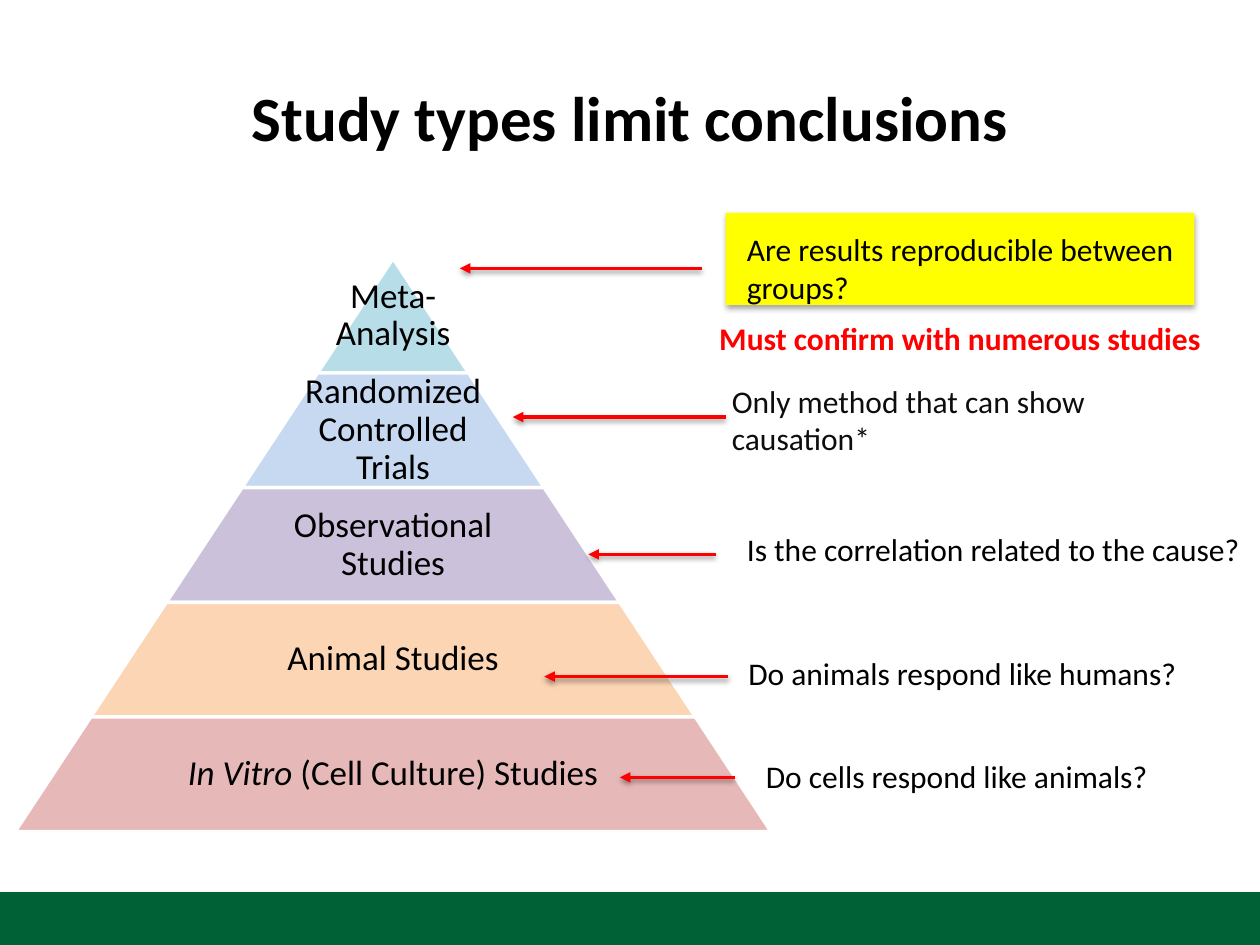
from dataclasses import dataclass

from lxml import etree
from pptx import Presentation
from pptx.dml.color import RGBColor
from pptx.enum.shapes import MSO_CONNECTOR, MSO_SHAPE
from pptx.enum.text import MSO_ANCHOR, MSO_AUTO_SIZE, PP_ALIGN
from pptx.oxml.ns import qn
from pptx.shapes.autoshape import Shape
from pptx.slide import Slide
from pptx.util import Inches, Pt

STRAIGHT = MSO_CONNECTOR.STRAIGHT
RECTANGLE = MSO_SHAPE.RECTANGLE
MIDDLE = MSO_ANCHOR.MIDDLE
FIT_SHAPE = MSO_AUTO_SIZE.SHAPE_TO_FIT_TEXT
LEFT, CENTER = PP_ALIGN.LEFT, PP_ALIGN.CENTER

BLACK = RGBColor(0x00, 0x00, 0x00)
CHARCOAL = RGBColor(0x0D, 0x0D, 0x0D)
WHITE = RGBColor(0xFF, 0xFF, 0xFF)
RED = RGBColor(0xFF, 0x00, 0x00)
YELLOW = RGBColor(0xFF, 0xFF, 0x00)
GREEN = RGBColor(0x00, 0x60, 0x36)
AQUA = RGBColor(0xB7, 0xDE, 0xE8)
BLUE = RGBColor(0xC6, 0xD9, 0xF1)
PURPLE = RGBColor(0xCC, 0xC1, 0xDA)
ORANGE = RGBColor(0xFC, 0xD5, 0xB5)
PINK = RGBColor(0xE6, 0xB9, 0xB8)

FONT = "Calibri"
APEX_X, APEX_Y = 3.12, 2.05
TIER_HEIGHT = 0.91
TIER_SPREAD = 0.6


@dataclass
class Tier:
    text: str
    color: RGBColor
    side_inset: float
    italic_text: str = ""


@dataclass
class Note:
    text: str
    left: float
    top: float
    width: float
    height: float = 0.4
    color: RGBColor = BLACK
    wrap: bool = False
    bold: bool = False
    alignment: PP_ALIGN = LEFT


@dataclass
class Arrow:
    tip: float
    tail: float
    y: float


TIERS = [
    Tier("Meta-Analysis", AQUA, 0.02),
    Tier("Randomized Controlled Trials", BLUE, 0.44),
    Tier("Observational Studies", PURPLE, 0.65),
    Tier("Animal Studies", ORANGE, 0.86),
    Tier(" (Cell Culture) Studies", PINK, 1.07, "In Vitro"),
]
NOTES = [
    Note("Are results reproducible between groups?", 5.83, 1.78, 3.67, 0.71, wrap=True),
    Note("Must confirm with numerous studies", 5.24, 2.48, 4.76,
         color=RED, wrap=True, bold=True, alignment=CENTER),
    Note("Only method that can show causation*", 5.71, 2.98, 3.48, 0.71, CHARCOAL, True),
    Note("Is the correlation related to the cause?", 5.83, 4.16, 4.17),
    Note("Do animals respond like humans?", 5.84, 5.14, 3.65),
    Note("Do cells respond like animals?", 5.98, 5.96, 3.27),
]
ARROWS = [
    Arrow(3.65, 5.57, 2.13),
    Arrow(4.07, 5.76, 3.31),
    Arrow(4.67, 5.68, 4.4),
    Arrow(4.32, 5.78, 5.37),
    Arrow(4.92, 5.83, 6.17),
]


def add_shadow(properties: etree._Element, distance: float, opacity: int) -> None:
    effects = etree.SubElement(properties, qn("a:effectLst"))
    shadow = etree.SubElement(
        effects, qn("a:outerShdw"), blurRad=str(Pt(3.1)), dist=str(Pt(distance)),
        dir="5400000", rotWithShape="0")
    color = etree.SubElement(shadow, qn("a:srgbClr"), val=str(BLACK))
    etree.SubElement(color, qn("a:alpha"), val=str(opacity * 1000))


def add_panel(slide: Slide, left: float, top: float, width: float, height: float,
              color: RGBColor) -> None:
    panel = slide.shapes.add_shape(
        RECTANGLE, Inches(left), Inches(top), Inches(width), Inches(height))
    panel.fill.solid()
    panel.fill.fore_color.rgb = color
    panel.line.fill.background()
    add_shadow(panel._element.spPr, 1.8, 35)


def style_text(shape: Shape, size: int, color: RGBColor, alignment: PP_ALIGN,
               bold: bool = False) -> None:
    paragraph = shape.text_frame.paragraphs[0]
    paragraph.alignment = alignment
    paragraph.font.name = FONT
    paragraph.font.size = Pt(size)
    paragraph.font.bold = bold
    paragraph.font.color.rgb = color


def add_title(slide: Slide) -> None:
    title = slide.shapes.title
    title.left, title.top = Inches(0.5), Inches(0.3)
    title.width, title.height = Inches(9), Inches(1.25)
    title.text_frame.text = "Study types limit conclusions"
    title.text_frame.vertical_anchor = MIDDLE
    style_text(title, 36, BLACK, CENTER, bold=True)


def add_pyramid(slide: Slide, tiers: list[Tier]) -> None:
    pyramid = slide.shapes.add_group_shape()
    for index, tier in enumerate(tiers):
        top = Inches(APEX_Y + index * TIER_HEIGHT)
        bottom = Inches(APEX_Y + (index + 1) * TIER_HEIGHT)
        upper, lower = index * TIER_SPREAD, (index + 1) * TIER_SPREAD
        builder = pyramid.shapes.build_freeform(Inches(APEX_X - lower), bottom)
        builder.add_line_segments([
            (Inches(APEX_X - upper), top),
            (Inches(APEX_X + upper), top),
            (Inches(APEX_X + lower), bottom),
        ])
        shape = builder.convert_to_shape()
        shape.shadow.inherit = False
        shape.fill.solid()
        shape.fill.fore_color.rgb = tier.color
        shape.line.color.rgb = WHITE
        shape.line.width = Pt(2)
        frame = shape.text_frame
        frame.word_wrap = True
        frame.vertical_anchor = MIDDLE
        frame.margin_left = frame.margin_right = Inches(tier.side_inset)
        frame.margin_top = frame.margin_bottom = Inches(0.02)
        paragraph = frame.paragraphs[0]
        paragraph.line_spacing = 0.9
        if tier.italic_text:
            run = paragraph.add_run()
            run.text = tier.italic_text
            run.font.italic = True
        paragraph.add_run().text = tier.text
        style_text(shape, 20, BLACK, CENTER)


def add_note(slide: Slide, note: Note) -> None:
    box = slide.shapes.add_textbox(
        Inches(note.left), Inches(note.top), Inches(note.width), Inches(note.height))
    box.text_frame.text = note.text
    box.text_frame.word_wrap = note.wrap
    box.text_frame.auto_size = FIT_SHAPE
    style_text(box, 18, note.color, note.alignment, note.bold)


def add_arrow(slide: Slide, arrow: Arrow) -> None:
    connector = slide.shapes.add_connector(
        STRAIGHT, Inches(arrow.tip), Inches(arrow.y), Inches(arrow.tail), Inches(arrow.y))
    connector.line.color.rgb = RED
    connector.line.width = Pt(2)
    etree.SubElement(connector.get_or_add_ln(), qn("a:headEnd"), type="triangle")
    add_shadow(connector._element.spPr, 1.6, 38)


def main() -> None:
    presentation = Presentation()
    presentation.slide_width, presentation.slide_height = Inches(10), Inches(7.5)
    slide = presentation.slides.add_slide(presentation.slide_layouts[5])
    add_title(slide)
    add_panel(slide, 0, 7.08, 10, 0.42, GREEN)
    add_panel(slide, 5.76, 1.69, 3.72, 0.73, YELLOW)
    add_pyramid(slide, TIERS)
    for note in NOTES:
        add_note(slide, note)
    for arrow in ARROWS:
        add_arrow(slide, arrow)
    presentation.save("out.pptx")


if __name__ == "__main__":
    main()
